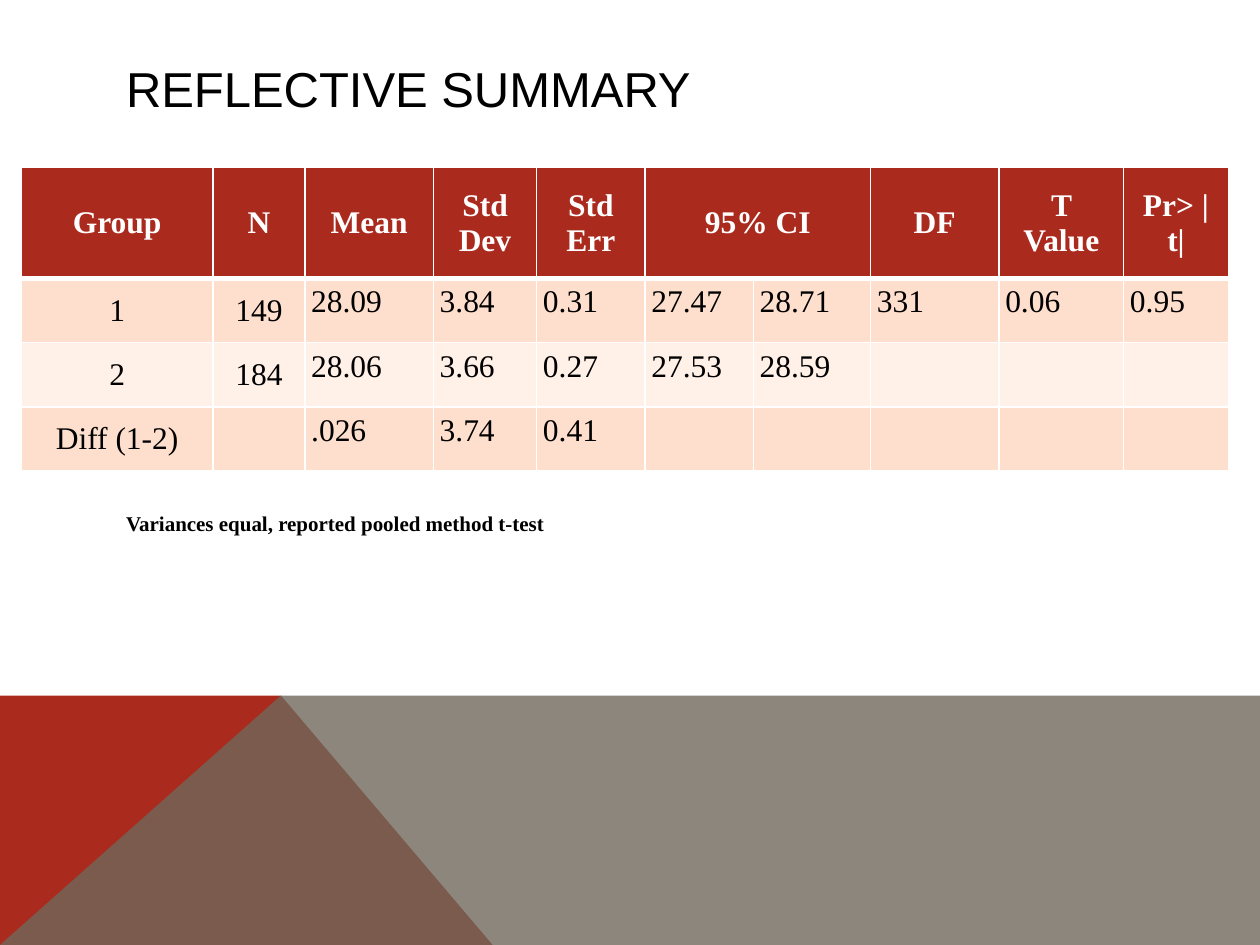
import pptx
import pptx.dml.color
import pptx.enum.text
import pptx.oxml
import pptx.oxml.ns
import pptx.util
from lxml import etree

Inches = pptx.util.Inches
Pt = pptx.util.Pt
RGBColor = pptx.dml.color.RGBColor
ALIGN = pptx.enum.text.PP_ALIGN
ANCHOR = pptx.enum.text.MSO_ANCHOR

RED = RGBColor(0xAA, 0x2B, 0x1E)
TAUPE = RGBColor(0x71, 0x68, 0x5C)
PEACH = RGBColor(0xFE, 0xDF, 0xCD)
PALE_PEACH = RGBColor(0xFF, 0xF0, 0xE8)
BLACK = RGBColor(0, 0, 0)
WHITE = RGBColor(0xFF, 0xFF, 0xFF)
SERIF = "Times New Roman"

COLUMN_WIDTHS = [1.52, 0.73, 1.02, 0.82, 0.86, 0.86, 0.93, 1.02, 0.99, 0.83]
ROW_HEIGHTS = [0.88, 0.51, 0.51, 0.51]
ROWS = [
    ["Group", "N", "Mean", "Std Dev", "Std Err", "95% CI", "", "DF", "T Value", "Pr> |t|"],
    ["1", "149", "28.09", "3.84", "0.31", "27.47", "28.71", "331", "0.06", "0.95"],
    ["2", "184", "28.06", "3.66", "0.27", "27.53", "28.59", "", "", ""],
    ["Diff (1-2)", "", ".026", "3.74", "0.41", "", "", "", "", ""],
]
CI_COLUMN = 5
LABEL_COLUMNS = 2


def add_span(para, text, font, size, color, bold=False):
    span = para.add_run()
    span.text = text
    span.font.name = font
    span.font.size = Pt(size)
    span.font.color.rgb = color
    span.font.bold = bold


def place(shape, box):
    shape.left, shape.top, shape.width, shape.height = map(Inches, box)


def add_polygon(page, points, color, opacity=100):
    corners = [(Inches(x), Inches(y)) for x, y in points]
    builder = page.shapes.build_freeform(*corners[0])
    builder.add_line_segments(corners[1:], close=True)
    polygon = builder.convert_to_shape()
    polygon.shadow.inherit = False
    polygon.fill.solid()
    polygon.fill.fore_color.rgb = color
    polygon.line.fill.background()
    if opacity < 100:
        tint = polygon.fill._xPr.find(".//" + pptx.oxml.ns.qn("a:srgbClr"))
        alpha = etree.SubElement(tint, pptx.oxml.ns.qn("a:alpha"))
        alpha.set("val", str(opacity * 1000))


def add_footer_band(page, box):
    """Red corner under a translucent band, meeting at a peak."""
    left, top, width, height = box
    right, bottom = left + width, top + height
    peak = (left + 2.23, top)
    add_polygon(page, [(left, bottom), (left, top), peak, (left + 3.91, bottom)], RED)
    add_polygon(page, [(left, bottom), peak, (right, top), (right, bottom)], TAUPE, 80)


def fill_title(page, box):
    title = page.shapes.title
    place(title, box)
    title.text_frame.vertical_anchor = ANCHOR.MIDDLE
    para = title.text_frame.paragraphs[0]
    para.alignment = ALIGN.LEFT
    add_span(para, "REFLECTIVE SUMMARY", "Arial", 28, BLACK)


def fill_note(page, box):
    note = page.placeholders[1]
    place(note, box)
    para = note.text_frame.paragraphs[0]
    para.space_before = Pt(8)
    add_span(para, "Variances equal, reported pooled method t-test", SERIF, 12, BLACK, True)
    properties = para._p.get_or_add_pPr()
    properties.set("marL", str(Inches(0.38)))
    properties.set("indent", str(Inches(-0.38)))
    etree.SubElement(properties, pptx.oxml.ns.qn("a:buNone"))


def add_borders(cell, bottom_width):
    properties = cell._tc.get_or_add_tcPr()
    for side, width in (("L", 1), ("R", 1), ("T", 1), ("B", bottom_width)):
        properties.append(pptx.oxml.parse_xml(
            f'<a:ln{side} {pptx.oxml.ns.nsdecls("a")} w="{Pt(width)}">'
            f'<a:solidFill><a:srgbClr val="{WHITE}"/></a:solidFill></a:ln{side}>'))


def format_cell(cell, text, row, column):
    header = row == 0
    add_borders(cell, 3 if header else 1)
    cell.fill.solid()
    cell.fill.fore_color.rgb = RED if header else PEACH if row % 2 else PALE_PEACH
    para = cell.text_frame.paragraphs[0]
    if header or column < LABEL_COLUMNS:
        cell.vertical_anchor = ANCHOR.MIDDLE
        para.alignment = ALIGN.CENTER
    else:
        cell.margin_left = cell.margin_right = Inches(0.05)
        cell.margin_top = cell.margin_bottom = Inches(0.05)
    if text:
        add_span(para, text, SERIF, 18, WHITE if header else BLACK, header)


def add_results_table(page, box):
    frame = page.shapes.add_table(len(ROWS), len(COLUMN_WIDTHS), *map(Inches, box))
    table = frame.table
    for column, width in zip(table.columns, COLUMN_WIDTHS):
        column.width = Inches(width)
    for row, height in zip(table.rows, ROW_HEIGHTS):
        row.height = Inches(height)
    for row, texts in enumerate(ROWS):
        for column, text in enumerate(texts):
            format_cell(table.cell(row, column), text, row, column)
    table.cell(0, CI_COLUMN).merge(table.cell(0, CI_COLUMN + 1))


def main():
    deck = pptx.Presentation()
    deck.slide_width, deck.slide_height = Inches(10), Inches(7.5)
    page = deck.slides.add_slide(deck.slide_layouts[1])
    add_footer_band(page, (0, 5.52, 10, 1.98))
    fill_title(page, (0.9, 0.4, 8.22, 0.6))
    fill_note(page, (0.9, 4, 8.22, 1.12))
    add_results_table(page, (0.17, 1.33, 9.58, 2.42))
    deck.save("out.pptx")


if __name__ == "__main__":
    main()
